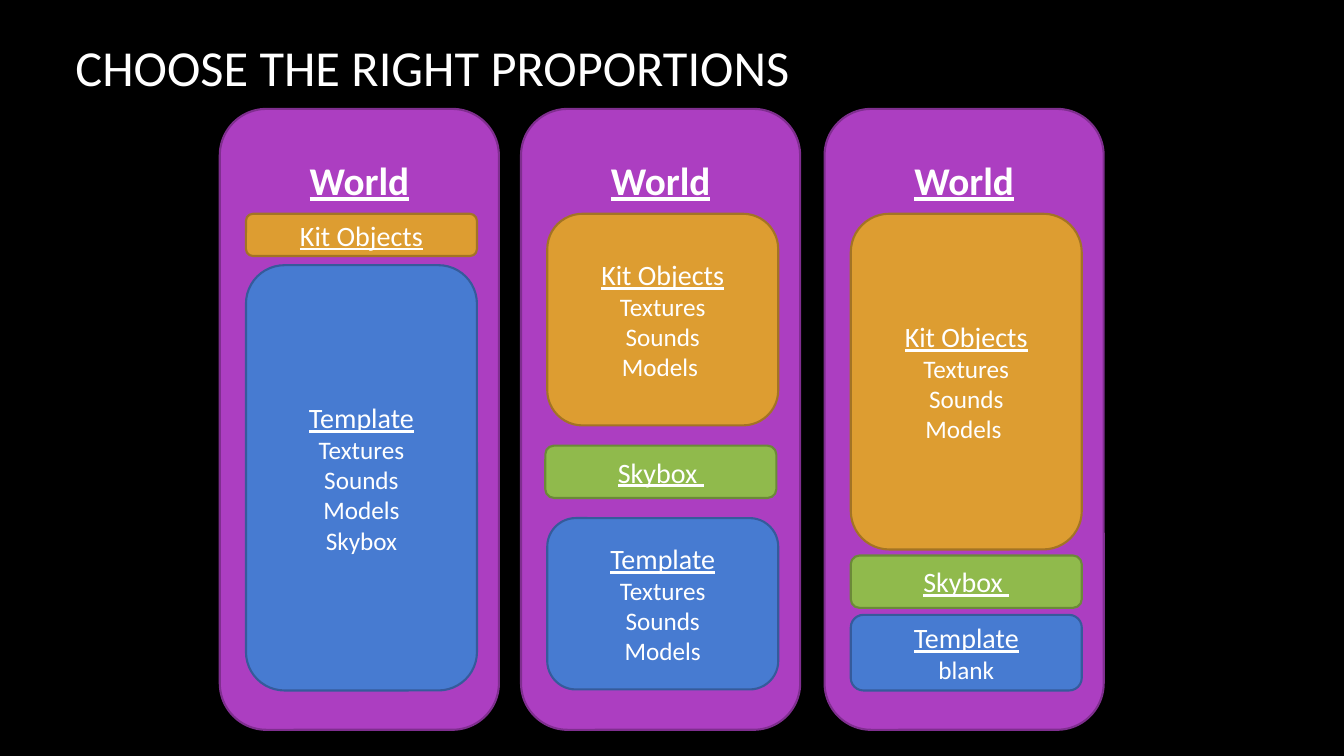
from collections import namedtuple

from pptx import Presentation
from pptx.dml.color import RGBColor
from pptx.enum import shapes, text
from pptx.util import Pt

BLACK = RGBColor(0x00, 0x00, 0x00)
WHITE = RGBColor(0xFF, 0xFF, 0xFF)
PURPLE = RGBColor(0xAC, 0x3E, 0xC1)
DARK_PURPLE = RGBColor(0x7F, 0x2E, 0x8F)
BLUE = RGBColor(0x47, 0x7B, 0xD1)
DARK_BLUE = RGBColor(0x35, 0x5B, 0x9B)
GREEN = RGBColor(0x90, 0xBA, 0x4C)
DARK_GREEN = RGBColor(0x6B, 0x8A, 0x38)
ORANGE = RGBColor(0xDD, 0x9D, 0x31)
DARK_ORANGE = RGBColor(0xA3, 0x74, 0x24)

FONT = "Calibri"
Box = namedtuple("Box", "left top width height")
# Block tops are measured from the top of the world panel.
Block = namedtuple("Block", "kind top height items shift", defaults=([], 0))

KINDS = {
    "Kit Objects": (ORANGE, DARK_ORANGE),
    "Skybox ": (GREEN, DARK_GREEN),
    "Template": (BLUE, DARK_BLUE),
}
KIT_ITEMS = ["Textures", "Sounds", "Models "]
TEMPLATE_ITEMS = ["Textures", "Sounds", "Models"]

PANEL_TOP, PANEL_WIDTH, PANEL_HEIGHT = 77.8, 199.4, 443.5
BLOCK_INSET, BLOCK_WIDTH = 18.7, 165
KIT_TOP, SKYBOX_HEIGHT = 74.9, 37.4

WORLDS = [
    (157, [
        Block("Kit Objects", KIT_TOP, 30.2),
        Block("Template", 111.6, 303.8, TEMPLATE_ITEMS + ["Skybox"]),
    ]),
    (372.2, [
        Block("Kit Objects", KIT_TOP, 151.2, KIT_ITEMS),
        Block("Skybox ", 240.5, SKYBOX_HEIGHT, shift=-1.4),
        Block("Template", 292.3, 122.4, TEMPLATE_ITEMS),
    ]),
    (589, [
        Block("Kit Objects", KIT_TOP, 239.8, KIT_ITEMS),
        Block("Skybox ", 319, SKYBOX_HEIGHT),
        Block("Template", 361.4, 54, ["blank"]),
    ]),
]


def style_font(para, size, bold=False, underline=False):
    for span in para.runs:
        span.font.name = FONT
        span.font.size = Pt(size)
        span.font.bold = bold
        span.font.underline = underline
        span.font.color.rgb = WHITE


def add_title(page, box, words):
    title = page.shapes.add_textbox(*map(Pt, box))
    frame = title.text_frame
    frame.word_wrap = True
    frame.vertical_anchor = text.MSO_ANCHOR.MIDDLE
    frame.text = words
    style_font(frame.paragraphs[0], 36)


def add_rounded(page, box, colors, lines, heading_size, bold=False):
    """Add a rounded box with an underlined heading and plain lines below it."""
    shape = page.shapes.add_shape(
        shapes.MSO_SHAPE.ROUNDED_RECTANGLE, *map(Pt, box))
    shape.shadow.inherit = False
    shape.fill.solid()
    shape.fill.fore_color.rgb, shape.line.color.rgb = colors
    shape.line.width = Pt(1.5)
    frame = shape.text_frame
    frame.word_wrap = True
    frame.vertical_anchor = text.MSO_ANCHOR.MIDDLE
    frame.text = "\n".join(lines)
    for index, para in enumerate(frame.paragraphs):
        para.alignment = text.PP_ALIGN.CENTER
        if index == 0:
            style_font(para, heading_size, bold, underline=True)
        else:
            style_font(para, 18)
    return shape


def add_world(page, box, blocks):
    panel = add_rounded(
        page, box, (PURPLE, DARK_PURPLE), ["World"], 28, bold=True)
    panel.text_frame.vertical_anchor = text.MSO_ANCHOR.TOP
    panel.text_frame.margin_top = Pt(24)
    for block in blocks:
        block_box = Box(box.left + BLOCK_INSET + block.shift,
                        box.top + block.top, BLOCK_WIDTH, block.height)
        add_rounded(page, block_box, KINDS[block.kind],
                    [block.kind] + block.items, 20)


def add_proportions_slide(deck):
    page = deck.slides.add_slide(deck.slide_layouts[6])
    page.background.fill.solid()
    page.background.fill.fore_color.rgb = BLACK
    add_title(page, Box(46.8, 16.6, 780, 61.2),
              "CHOOSE THE RIGHT PROPORTIONS")
    for left, blocks in WORLDS:
        add_world(page, Box(left, PANEL_TOP, PANEL_WIDTH, PANEL_HEIGHT), blocks)


def main():
    deck = Presentation()
    deck.slide_width, deck.slide_height = Pt(960), Pt(540)
    add_proportions_slide(deck)
    deck.save("out.pptx")


if __name__ == "__main__":
    main()
